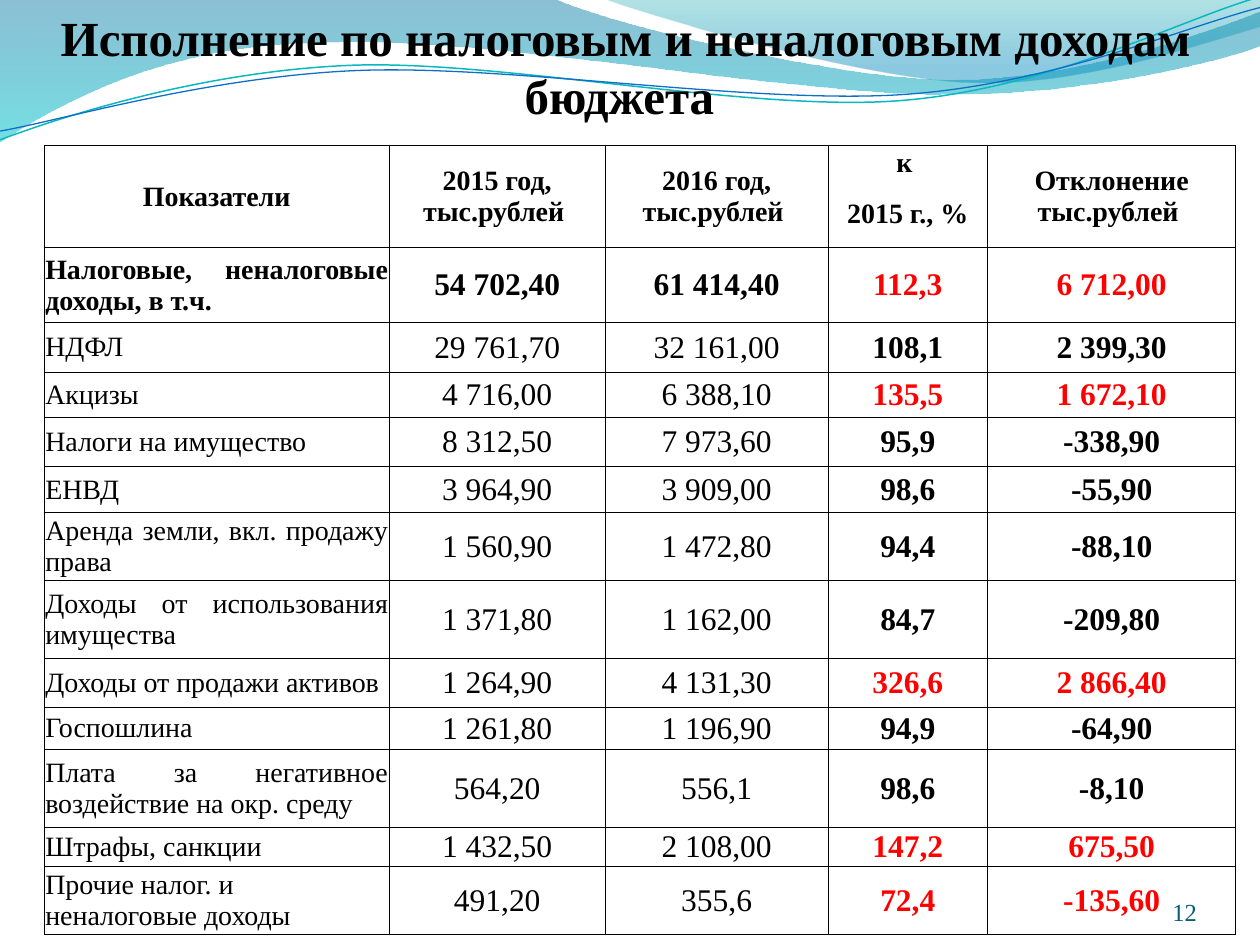
import pptx
import pptx.dml.color
import pptx.enum.text
import pptx.oxml
import pptx.oxml.ns
import pptx.util
import lxml.etree

Pt = pptx.util.Pt
qn = pptx.oxml.ns.qn
ALIGN = pptx.enum.text.PP_ALIGN
ANCHOR = pptx.enum.text.MSO_ANCHOR
COLORS = {
    "black": "000000", "red": "FF0000", "number": "045D75",
    "blue": "0074A1", "cyan": "00C6CF", "teal": "00A1A9", "sky": "008BBF",
    "teal line": "0AB8BF", "blue line": "0F6FC6",
}


def rgb(name):
    return pptx.dml.color.RGBColor.from_string(COLORS[name])


def write_text(frame, text, size=16, bold=False, color="black", align=ALIGN.CENTER):
    frame.word_wrap = True
    paragraph = frame.paragraphs[0]
    paragraph.alignment = align
    run = paragraph.add_run()
    run.text = text
    run.font.name = "Times New Roman"
    run.font.size = Pt(size)
    run.font.bold = bold
    run.font.color.rgb = rgb(color)


presentation = pptx.Presentation()
presentation.slide_width = Pt(720)
presentation.slide_height = Pt(540)
slide = presentation.slides.add_slide(presentation.slide_layouts[6])

waves = [
    ([(0, -0.7), (316.8, -0.7), (342.7, 12.2, 478.1, 45.4, 545.8, 45.4),
      (614.2, 45.4, 689.8, 18.7, 720, 6.5), (720.7, 25.9),
      (707.8, 31.7, 626.4, 54.7, 537.1, 54), (447.8, 54, 275, 20.2, 185, 24.5),
      (92.9, 25.2, 33.1, 59.8, -0.7, 81.4), (0, -0.7)],
     [("blue", 0, 45), ("cyan", 1, 55)], None),
    ([(344.9, -0.7), (366.5, 7.9, 491, 44.6, 553.7, 46.8),
      (616.3, 49.7, 691.9, 23, 720, 15.1), (720, 0), (344.9, -0.7)],
     [("teal", 0, 30), ("sky", 0.8, 45)], None),
    ([(0, 79.9), (34.6, 67, 113.8, 41, 199.4, 37.4),
      (284.4, 33.8, 427, 64.1, 513.4, 57.6), (599.8, 51.1, 675.4, 10.8, 718.6, -1.4)],
     None, ("teal line", 0.85)),
    ([(0, 74.9), (33.8, 69.1, 118.1, 43.9, 203.8, 40.3),
      (290.2, 36.7, 429.8, 59.8, 516.2, 54), (601.9, 48.2, 677.5, 15.1, 720, 4.3)],
     None, ("blue line", 0.75)),
]
for parts, stops, line in waves:
    corners = [(Pt(part[-2]), Pt(part[-1])) for part in parts]
    builder = slide.shapes.build_freeform(*corners[0])
    builder.add_line_segments(corners[1:], close=stops is not None)
    shape = builder.convert_to_shape()
    shape.shadow.inherit = False
    for segment, part in zip(list(shape.element.iter(qn("a:lnTo"))), parts[1:]):
        if len(part) == 6:
            segment.tag = qn("a:cubicBezTo")
            segment.clear()
            for x, y in zip(part[::2], part[1::2]):
                lxml.etree.SubElement(segment, qn("a:pt"), x=str(Pt(x) - shape.left), y=str(Pt(y) - shape.top))
    if stops:
        shape.line.fill.background()
        shape.fill.gradient()
        shape.fill.gradient_angle = 270
        for stop, (color, position, opacity) in zip(shape.fill.gradient_stops, stops):
            stop.position = position
            stop.color.rgb = rgb(color)
        fill_colors = shape.element.spPr.find(qn("a:gradFill")).iter(qn("a:srgbClr"))
        for fill_color, (color, position, opacity) in zip(fill_colors, stops):
            lxml.etree.SubElement(fill_color, qn("a:alpha")).set("val", str(opacity * 1000))
    else:
        shape.fill.background()
        shape.line.color.rgb = rgb(line[0])
        shape.line.width = Pt(line[1])

captions = [
    ((25.2, 15.1, 664.6, 56.2), "Исполнение по налоговым и неналоговым доходам бюджета ",
     dict(size=28, bold=True)),
    ((516.2, 491.8, 167.8, 37.4), "12", dict(size=14, color="number", align=ALIGN.RIGHT)),
]
for bounds, text, text_format in captions:
    box = slide.shapes.add_textbox(*map(Pt, bounds))
    frame = box.text_frame
    frame.margin_left = frame.margin_top = frame.margin_right = frame.margin_bottom = 0
    frame.vertical_anchor = ANCHOR.BOTTOM
    write_text(frame, text, **text_format)

headers = ["Показатели", "2015 год, тыс.рублей ", "2016 год, тыс.рублей ", "к ", "Отклонение тыс.рублей "]
income_rows = [
    ("Налоговые, неналоговые доходы, в т.ч. ", "54 702,40", "61 414,40", "112,3", "6 712,00"),
    ("НДФЛ", "29 761,70", "32 161,00", "108,1", "2 399,30"),
    ("Акцизы ", "4 716,00", "6 388,10", "135,5", "1 672,10"),
    ("Налоги на имущество", "8 312,50", "7 973,60", "95,9", "-338,90"),
    ("ЕНВД ", "3 964,90", "3 909,00", "98,6", "-55,90"),
    ("Аренда земли, вкл. продажу права ", "1 560,90", "1 472,80", "94,4", "-88,10"),
    ("Доходы от использования имущества", "1 371,80", "1 162,00", "84,7", "-209,80"),
    ("Доходы от продажи активов", "1 264,90", "4 131,30", "326,6", "2 866,40"),
    ("Госпошлина", "1 261,80", "1 196,90", "94,9", "-64,90"),
    ("Плата за негативное воздействие на окр. среду", "564,20", "556,1", "98,6", "-8,10"),
    ("Штрафы, санкции", "1 432,50", "2 108,00", "147,2", "675,50"),
    ("Прочие налог. и неналоговые доходы", "491,20", "355,6", "72,4", "-135,60"),
]
red_rows = {0, 2, 7, 10, 11}
left_rows = {8, 10, 11}
column_widths = [197.3, 123.3, 127.5, 91, 142]
row_heights = [19.5, 34.8, 42.8, 28.4, 25.8, 28.2, 26.2, 37.2, 44.6, 28, 24, 44.6, 22.3, 37.2]

table = slide.shapes.add_table(
    len(row_heights), len(column_widths), Pt(25.2), Pt(83),
    Pt(sum(column_widths)), Pt(sum(row_heights))).table
table.first_row = False
table.horz_banding = False
for column, width in zip(table.columns, column_widths):
    column.width = Pt(width)
for row, height in zip(table.rows, row_heights):
    row.height = Pt(height)

for row_index in range(len(row_heights)):
    for column_index in range(len(column_widths)):
        cell = table.cell(row_index, column_index)
        cell.margin_left = cell.margin_right = Pt(0.7)
        cell.margin_top = Pt(0.4)
        cell.margin_bottom = 0
        cell.vertical_anchor = ANCHOR.MIDDLE
        paragraph = cell.text_frame.paragraphs[0]
        lxml.etree.SubElement(paragraph._p, qn("a:endParaRPr"), sz="1600")
        open_side = {(0, 3): "lnB", (1, 3): "lnT"}.get((row_index, column_index))
        properties = cell._tc.get_or_add_tcPr()
        for side in ("lnL", "lnR", "lnT", "lnB"):
            border = lxml.etree.SubElement(properties, qn("a:" + side), w=str(Pt(0.5)))
            if side == open_side:
                lxml.etree.SubElement(border, qn("a:noFill"))
            else:
                solid = lxml.etree.SubElement(border, qn("a:solidFill"))
                lxml.etree.SubElement(solid, qn("a:srgbClr"), val=COLORS["black"])
        cell.fill.background()

for column_index, header in enumerate(headers):
    cell = table.cell(0, column_index)
    if column_index != 3:
        cell.merge(table.cell(1, column_index))
    write_text(cell.text_frame, header, bold=True)
write_text(table.cell(1, 3).text_frame, "2015 г., %", bold=True)

for row_index, values in enumerate(income_rows):
    for column_index, value in enumerate(values):
        is_label = column_index == 0
        is_result = column_index >= 3
        label_align = ALIGN.LEFT if row_index in left_rows else ALIGN.JUSTIFY
        write_text(
            table.cell(row_index + 2, column_index).text_frame, value,
            size=16 if is_label else 18,
            bold=row_index == 0 or is_result,
            color="red" if is_result and row_index in red_rows else "black",
            align=label_align if is_label else ALIGN.CENTER)

presentation.save("out.pptx")
